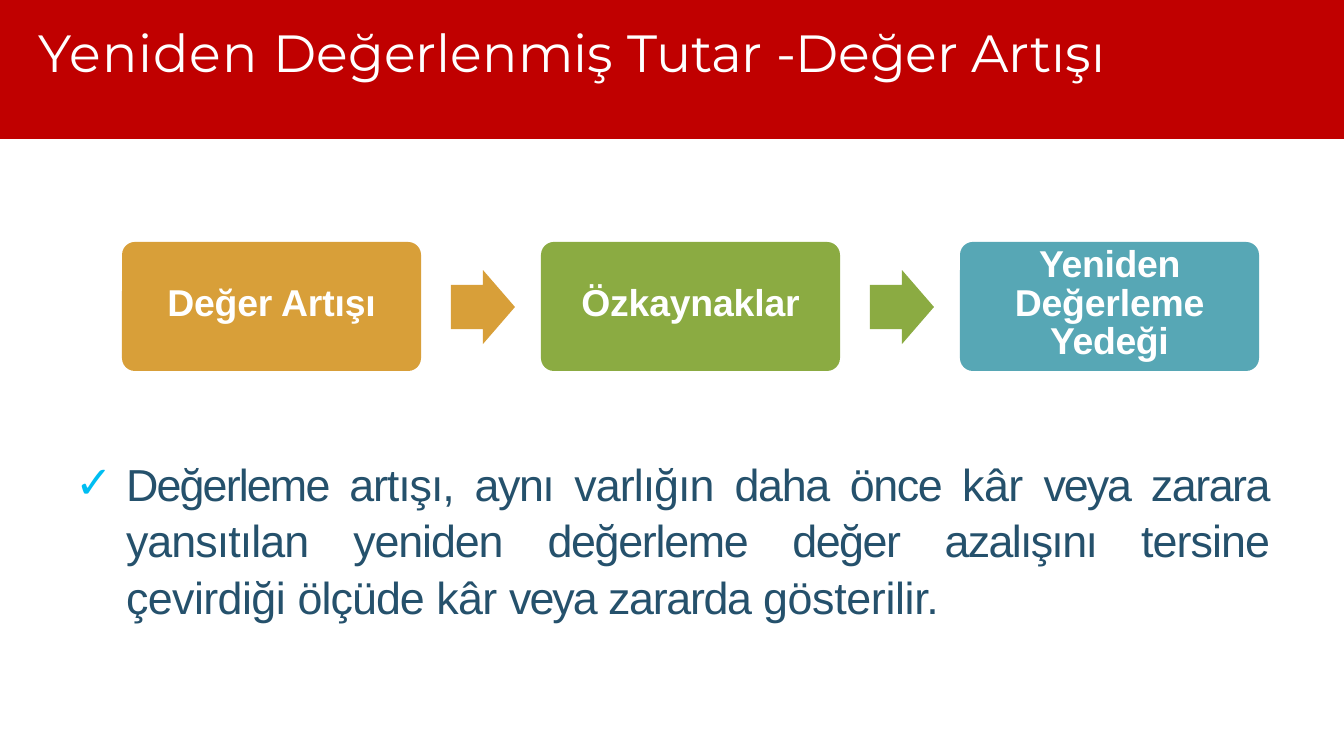
from lxml.etree import SubElement
from pptx import Presentation
from pptx.dml.color import RGBColor
from pptx.enum.shapes import MSO_SHAPE as Shape
from pptx.enum.text import MSO_ANCHOR as Anchor, MSO_AUTO_SIZE as AutoSize, PP_ALIGN as Align
from pptx.oxml.ns import qn
from pptx.util import Pt

EMU_PER_PX = 914400 / 134.4
WHITE = RGBColor(0xFF, 0xFF, 0xFF)
RED = RGBColor(0xC0, 0x00, 0x00)
AMBER = RGBColor(0xD8, 0x9F, 0x39)
GREEN = RGBColor(0x8B, 0xAB, 0x42)
TEAL = RGBColor(0x57, 0xA7, 0xB5)
NAVY = RGBColor(0x25, 0x51, 0x6C)
SKY = RGBColor(0x00, 0xBE, 0xF2)

# Each piece of text comes with its letter spacing in points.
TITLE = [("Yeniden ", 0.5), ("Değerlenmiş ", 0.1), ("Tutar ", -0.3),
         ("-", -2.5), ("Değer ", -0.1), ("Artışı", 0)]
STEPS = [
    (AMBER, [("Değer Artışı", -0.1)]),
    (GREEN, [("Özkaynaklar", -0.1)]),
    (TEAL, [("Yeniden ", -0.2), ("Değerleme ", -0.1), ("Yedeği", -0.2)]),
]
EXPLANATION = [
    ("Değerleme ", -1), ("artışı, ", -0.6), ("aynı ", -0.8), ("varlığın ", -0.5),
    ("daha ", -0.7), ("önce ", -0.8), ("kâr ", -0.3), ("veya ", -1.1),
    ("zarara ", -0.8), ("yansıtılan ", -0.5), ("yeniden ", -0.6),
    ("değerleme ", -0.7), ("değer ", -0.8), ("azalışını ", -0.9),
    ("tersine ", -0.5), ("çevirdiği ", -0.3), ("ölçüde ", -0.5), ("kâr ", -0.3),
    ("veya ", -1.1), ("zararda ", -0.7), ("gösterilir.", -0.2),
]


def px(length):
    return round(length * EMU_PER_PX)


class Deck:
    heading_font = "Montserrat"
    text_font = "Arial"

    def __init__(self, width, height):
        self.file = Presentation()
        self.file.slide_width, self.file.slide_height = px(width), px(height)
        self.slide = self.file.slides.add_slide(self.file.slide_layouts[1])

    def shape(self, kind, left, top, width, height, color):
        item = self.slide.shapes.add_shape(kind, px(left), px(top), px(width), px(height))
        item.shadow.inherit = False
        item.fill.solid()
        item.fill.fore_color.rgb = color
        item.line.fill.background()
        return item

    def band(self, width, height, color):
        """Add a strip along the top, behind everything else."""
        strip = self.shape(Shape.RECTANGLE, 0, 0, width, height, color)
        self.slide.shapes.element.insert(2, strip.element)

    def arrow(self, left, top, width, height, color):
        arrow = self.shape(Shape.RIGHT_ARROW, left, top, width, height, color)
        arrow.adjustments[0] = 0.6
        arrow.adjustments[1] = 0.5

    def step(self, left, top, width, height, color, pieces):
        box = self.shape(Shape.ROUNDED_RECTANGLE, left, top, width, height, color)
        box.adjustments[0] = 0.1
        paragraph = self.add_text(box, pieces, self.text_font, 20, WHITE, Align.CENTER,
                                  Anchor.MIDDLE, (36, 0, 36, 4), bold=True)
        paragraph.line_spacing = Pt(20.7)

    def title(self, left, top, width, height, pieces):
        title = self.place(self.slide.shapes.title, left, top, width, height)
        self.add_text(title, pieces, self.heading_font, 28, WHITE, Align.LEFT)

    def check_item(self, left, top, width, height, pieces):
        body = self.place(self.slide.placeholders[1], left, top, width, height)
        paragraph = self.add_text(body, pieces, self.text_font, 24, NAVY, Align.JUSTIFY)
        paragraph.line_spacing = 1.05
        properties = paragraph._p.get_or_add_pPr()
        properties.set("marL", str(px(52)))
        properties.set("indent", str(px(-51)))
        bullet_color = SubElement(properties, qn("a:buClr"))
        SubElement(bullet_color, qn("a:srgbClr"), val=str(SKY))
        SubElement(properties, qn("a:buChar"), char="✓")

    def place(self, holder, left, top, width, height):
        holder.left, holder.top = px(left), px(top)
        holder.width, holder.height = px(width), px(height)
        return holder

    def add_text(self, target, pieces, font, size, color, align,
                 anchor=Anchor.TOP, insets=(0, 1, 0, 0), bold=False):
        """Fill a shape with one paragraph of letter-spaced runs and return it."""
        frame = target.text_frame
        frame.word_wrap = True
        frame.auto_size = AutoSize.NONE
        frame.vertical_anchor = anchor
        (frame.margin_left, frame.margin_top,
         frame.margin_right, frame.margin_bottom) = map(px, insets)
        paragraph = frame.paragraphs[0]
        paragraph.alignment = align
        paragraph.space_before = Pt(0)
        for text, spacing in pieces:
            run = paragraph.add_run()
            run.text = text
            run.font.name = font
            run.font.size = Pt(size)
            run.font.bold = bold
            run.font.color.rgb = color
            run._r.get_or_add_rPr().set("spc", str(round(spacing * 100)))
        return paragraph


def main():
    deck = Deck(1344, 756)
    deck.band(1344, 139, RED)
    deck.title(39, 19, 1231, 66, TITLE)

    first_left, pitch = 122, 419
    for index, (color, label) in enumerate(STEPS):
        left = first_left + index * pitch
        deck.step(left, 242, 299, 129, color, label)
        if index < len(STEPS) - 1:
            deck.arrow(left + 329, 270, 64, 74, color)

    deck.check_item(74, 453, 1195, 165, EXPLANATION)
    deck.file.save("out.pptx")


if __name__ == "__main__":
    main()
